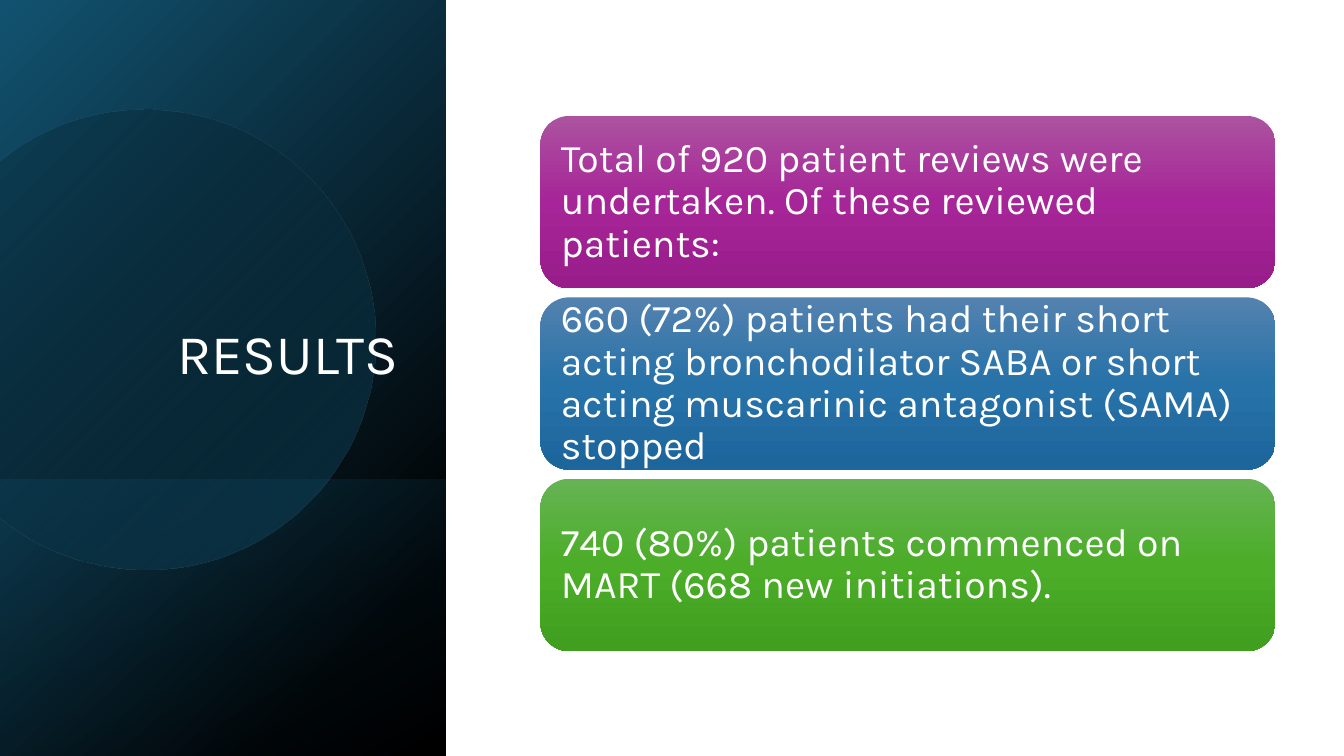
import math
from lxml import etree
from pptx import Presentation
from pptx.dml.color import RGBColor
from pptx.enum.shapes import MSO_SHAPE
from pptx.enum.text import MSO_ANCHOR, PP_ALIGN
from pptx.oxml.ns import qn
from pptx.util import Inches, Pt

RECTANGLE = MSO_SHAPE.RECTANGLE
ROUNDED = MSO_SHAPE.ROUNDED_RECTANGLE
MIDDLE, BOTTOM = MSO_ANCHOR.MIDDLE, MSO_ANCHOR.BOTTOM
LEFT, RIGHT = PP_ALIGN.LEFT, PP_ALIGN.RIGHT

TITLE = "RESULTS"
FINDINGS = [
    ("Total of 920 patient reviews were undertaken. Of these reviewed patients:", "purple"),
    ("660 (72%) patients had their short acting bronchodilator SABA or short acting "
     "muscarinic antagonist (SAMA) stopped", "blue"),
    ("740 (80%) patients commenced on MART (668 new initiations).", "green"),
]
THEME = {
    "font": "Karla",
    "text": "FFFFFF",
    "title_size": 40,
    "body_size": 28,
    "panel": [(0, "125270", 100), (85, "000000", 100), (100, "000000", 100)],
    "band": [(0, "156082", 29), (100, "000000", 30)],
    "circle": [(0, "000000", 15), (100, "156082", 43)],
    "purple": [(0, "AC53A0", 100), (50, "A62598", 100), (100, "991C8B", 100)],
    "blue": [(0, "5382AF", 100), (50, "2772A9", 100), (100, "1D669C", 100)],
    "green": [(0, "66B354", 100), (50, "4BAD28", 100), (100, "409F1E", 100)],
}
SLIDE_WIDTH, SLIDE_HEIGHT = 13.33, 7.5
PANEL_WIDTH, BAND_TOP = 4.42, 4.76
CIRCLE_X, CIRCLE_Y, RADIUS = 1.44, 3.37, 2.28
CARD_LEFT, CARD_TOP, CARD_WIDTH, CARD_HEIGHT, CARD_PITCH = 5.36, 1.15, 7.29, 1.71, 1.8


def paint(shape, stops, angle):
    shape.shadow.inherit = False
    shape.line.fill.background()
    shape.fill.gradient()
    shape.fill.gradient_angle = (360 - angle) % 360
    stop_list = shape._element.spPr.find(qn("a:gradFill")).find(qn("a:gsLst"))
    for stop in list(stop_list):
        stop_list.remove(stop)
    for position, color, opacity in stops:
        stop = etree.SubElement(stop_list, qn("a:gs"), pos=str(position * 1000))
        value = etree.SubElement(stop, qn("a:srgbClr"), val=color)
        if opacity < 100:
            etree.SubElement(value, qn("a:alpha"), val=str(opacity * 1000))


def add_block(slide, kind, left, top, width, height, stops, angle):
    shape = slide.shapes.add_shape(
        kind, Inches(left), Inches(top), Inches(width), Inches(height))
    paint(shape, stops, angle)
    return shape


def write(shape, text, size, align=LEFT, anchor=MIDDLE, side=0.12, bottom=0):
    frame = shape.text_frame
    frame.word_wrap = True
    frame.vertical_anchor = anchor
    frame.margin_left = frame.margin_right = Inches(side)
    frame.margin_top, frame.margin_bottom = 0, Inches(bottom)
    paragraph = frame.paragraphs[0]
    paragraph.alignment = align
    paragraph.line_spacing = 0.9
    run = paragraph.add_run()
    run.text = text
    run.font.name = THEME["font"]
    run.font.size = Pt(size)
    run.font.color.rgb = RGBColor.from_string(THEME["text"])


def add_clipped_circle(slide):
    limit = math.acos(-CIRCLE_X / RADIUS)
    steps = 120
    angles = [limit * (2 * step / steps - 1) for step in range(steps + 1)]
    points = [(Inches(CIRCLE_X + RADIUS * math.cos(angle)),
               Inches(CIRCLE_Y + RADIUS * math.sin(angle))) for angle in angles]
    builder = slide.shapes.build_freeform(*points[0])
    builder.add_line_segments(points[1:], close=True)
    paint(builder.convert_to_shape(), THEME["circle"], 45)


def main():
    presentation = Presentation()
    presentation.slide_width = Inches(SLIDE_WIDTH)
    presentation.slide_height = Inches(SLIDE_HEIGHT)
    slide = presentation.slides.add_slide(presentation.slide_layouts[6])

    add_block(slide, RECTANGLE, 0, 0, PANEL_WIDTH, SLIDE_HEIGHT, THEME["panel"], 45)
    add_block(slide, RECTANGLE, 0, BAND_TOP, PANEL_WIDTH, SLIDE_HEIGHT - BAND_TOP,
              THEME["band"], 60)
    add_clipped_circle(slide)

    title = slide.shapes.add_textbox(
        Inches(0.64), Inches(1.84), Inches(3.41), Inches(2.62))
    write(title, TITLE, THEME["title_size"], align=RIGHT, anchor=BOTTOM,
          side=0.1, bottom=0.64)

    for index, (text, color) in enumerate(FINDINGS):
        card = add_block(slide, ROUNDED, CARD_LEFT, CARD_TOP + index * CARD_PITCH,
                         CARD_WIDTH, CARD_HEIGHT, THEME[color], 90)
        write(card, text, THEME["body_size"])

    presentation.save("out.pptx")


if __name__ == "__main__":
    main()
